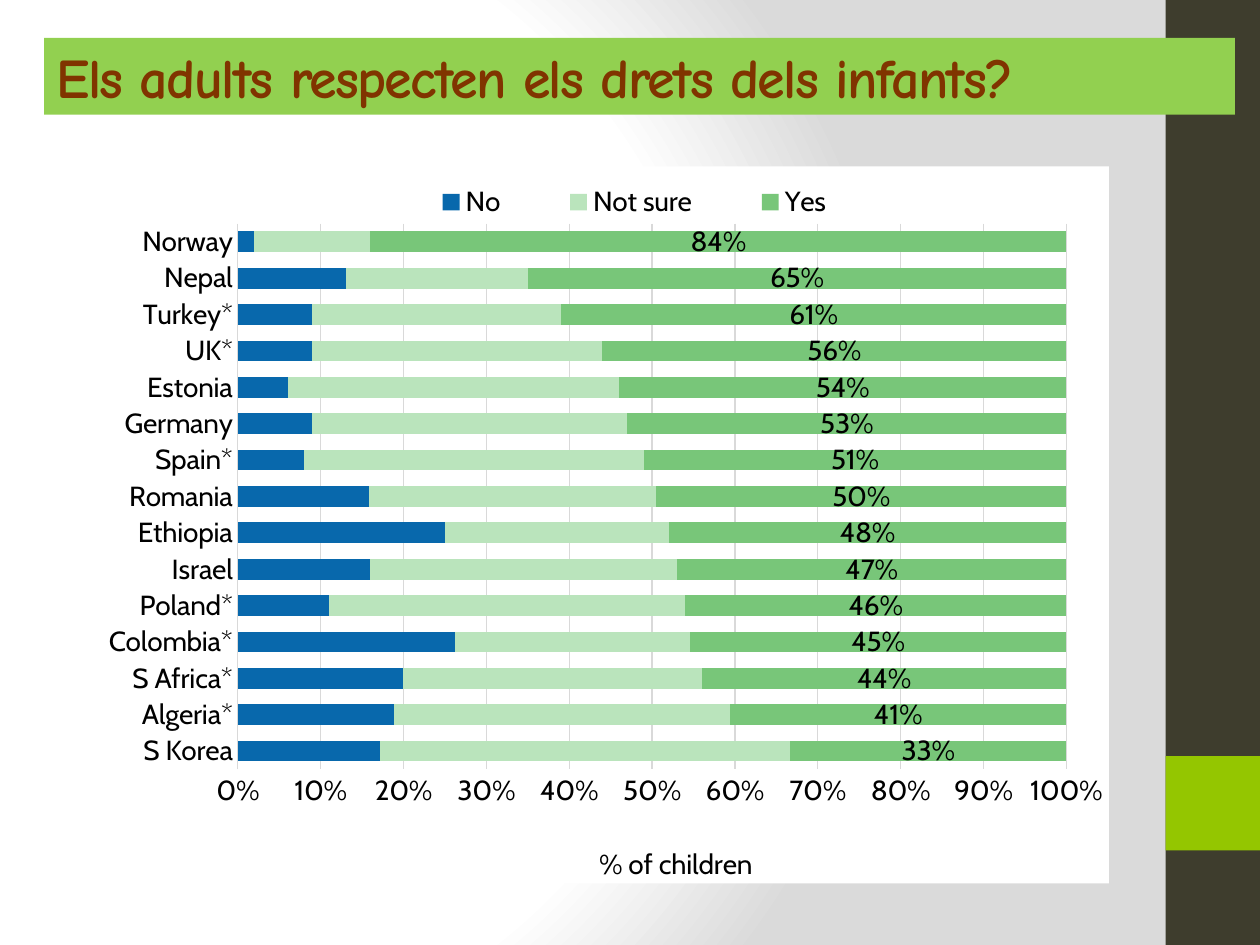
from pptx import Presentation
from pptx.chart.data import CategoryChartData
from pptx.dml.color import RGBColor
from pptx.enum.chart import (XL_CHART_TYPE, XL_LABEL_POSITION,
                             XL_LEGEND_POSITION, XL_TICK_MARK)
from pptx.enum.shapes import MSO_SHAPE
from pptx.enum.text import MSO_ANCHOR, MSO_AUTO_SIZE, PP_ALIGN
from pptx.oxml import parse_xml
from pptx.oxml.ns import nsdecls, qn
from pptx.util import Inches, Pt

TITLE = "Els adults respecten els drets dels infants?"
AXIS = "% of children"
ROWS = [  # country, no, not sure, yes
    ("S Korea", .17, .49, .33),
    ("Algeria*", .19, .41, .41),
    ("S Africa*", .20, .36, .44),
    ("Colombia*", .26, .28, .45),
    ("Poland*", .11, .43, .46),
    ("Israel", .16, .37, .47),
    ("Ethiopia", .25, .27, .48),
    ("Romania", .16, .35, .50),
    ("Spain*", .08, .41, .51),
    ("Germany", .09, .38, .53),
    ("Estonia", .06, .40, .54),
    ("UK*", .09, .35, .56),
    ("Turkey*", .09, .30, .61),
    ("Nepal", .13, .22, .65),
    ("Norway", .02, .14, .84),
]
SERIES = [("No", "0868AC"), ("Not sure", "BAE4BC"), ("Yes", "78C679")]
BARS = [((9.25, 0, .75, 7.5), "3E3D2D"), ((9.25, 6, .75, .75), "94C600")]
STOPS = [(0, "FFFFFF"), (75, "FFFFFF"), (100, "DADADA")]
THEME = {
    "band": "92D050", "head": "803400", "text": "000000",
    "grid": "D9D9D9", "paper": "FFFFFF",
    "head_font": "Comic Neue", "font": "Cabin",
    "head_size": 32, "size": 16,
}


def paint(fill, color):
    fill.solid()
    fill.fore_color.rgb = RGBColor.from_string(color)


def style(font, name="font", size="size", color="text", bold=False):
    font.name, font.size, font.bold = THEME[name], Pt(THEME[size]), bold
    font.color.rgb = RGBColor.from_string(THEME[color])


def rule(line):
    line.color.rgb = RGBColor.from_string(THEME["grid"])
    line.width = Pt(.75)


def place(node, after, x, y, w=None, h=None, inner=False):
    """Give a chart part a manual layout, as fractions of the chart."""
    for old in node.findall(qn("c:layout")):
        node.remove(old)
    parts = '<c:layoutTarget val="inner"/>' if inner else ""
    parts += '<c:xMode val="edge"/><c:yMode val="edge"/>'
    for key, val in zip("xywh", (x, y, w, h)):
        if val is not None:
            parts += f'<c:{key} val="{val}"/>'
    box = parse_xml(f'<c:layout {nsdecls("c")}><c:manualLayout>{parts}'
                    '</c:manualLayout></c:layout>')
    if after:
        node.find(qn(after)).addnext(box)
    else:
        node.insert(0, box)


def add_back(slide):
    stops = "".join(f'<a:gs pos="{pos * 1000}"><a:srgbClr val="{color}"/></a:gs>'
                    for pos, color in STOPS)
    slide.element.cSld.insert(0, parse_xml(
        f'<p:bg {nsdecls("p", "a")}><p:bgPr><a:gradFill rotWithShape="1">'
        f'<a:gsLst>{stops}</a:gsLst><a:path path="circle">'
        '<a:fillToRect l="20000" t="50000" r="100000" b="50000"/></a:path>'
        '</a:gradFill><a:effectLst/></p:bgPr></p:bg>'))
    for box, color in BARS:
        bar = slide.shapes.add_shape(MSO_SHAPE.RECTANGLE, *map(Inches, box))
        bar.shadow.inherit = False
        paint(bar.fill, color)
        bar.line.fill.background()


def add_title(slide):
    title = slide.shapes.title
    title.left, title.top, title.width, title.height = map(
        Inches, (.35, .3, 9.45, .61))
    paint(title.fill, THEME["band"])
    frame = title.text_frame
    frame.text = TITLE
    frame.auto_size = MSO_AUTO_SIZE.NONE
    frame.vertical_anchor = MSO_ANCHOR.MIDDLE
    para = frame.paragraphs[0]
    para.alignment = PP_ALIGN.LEFT
    style(para.font, "head_font", "head_size", "head", True)
    para.runs[0].font._element.set("spc", "-100")
    slide.shapes._spTree.append(title._element)  # in front of the side bars


def add_bars(slide):
    names, *cols = zip(*ROWS)
    data = CategoryChartData(number_format="0%")
    data.categories = names
    for (name, _), vals in zip(SERIES, cols):
        data.add_series(name, vals)
    chart = slide.shapes.add_chart(
        XL_CHART_TYPE.BAR_STACKED_100,
        *map(Inches, (.79, 1.32, 8.01, 5.74)), data).chart
    style(chart.font)
    chart.has_title = False
    space = chart._chartSpace
    space.chart.addnext(parse_xml(
        f'<c:spPr {nsdecls("c", "a")}><a:solidFill><a:srgbClr '
        f'val="{THEME["paper"]}"/></a:solidFill><a:ln><a:noFill/></a:ln></c:spPr>'))
    plot = chart.plots[0]
    plot.gap_width, plot.overlap = 75, 100
    plot.vary_by_categories = False
    for part, (_, color) in zip(plot.series, SERIES):
        paint(part.format.fill, color)
    labels = plot.series[-1].data_labels
    labels.show_value = True
    labels.number_format, labels.number_format_is_linked = "0%", False
    labels.position = XL_LABEL_POSITION.CENTER
    style(labels.font)

    cat, val = chart.category_axis, chart.value_axis
    for axis in (cat, val):
        axis.major_tick_mark = axis.minor_tick_mark = XL_TICK_MARK.NONE
        style(axis.tick_labels.font)
    cat.has_major_gridlines = False
    rule(cat.format.line)
    val.has_major_gridlines = True
    rule(val.major_gridlines.format.line)
    val.format.line.fill.background()
    val.minimum_scale, val.maximum_scale, val.major_unit = 0, 1, .1
    val.tick_labels.number_format = "0%"
    val.tick_labels.number_format_is_linked = False
    note = val.axis_title
    note.text_frame.text = AXIS
    style(note.text_frame.paragraphs[0].font)

    chart.has_legend = True
    legend = chart.legend
    legend.position = XL_LEGEND_POSITION.TOP
    legend.include_in_layout = False
    style(legend.font)
    place(space.chart.plotArea, None, .137, .08, .821, .761, True)
    place(legend._element, "c:legendPos", .28, .02, .5, .06)
    place(note._element, "c:tx", .49, .94)


def main():
    deck = Presentation()
    deck.slide_width, deck.slide_height = Inches(10), Inches(7.5)
    slide = deck.slides.add_slide(deck.slide_layouts[5])
    add_back(slide)
    add_title(slide)
    add_bars(slide)
    deck.save("out.pptx")


if __name__ == "__main__":
    main()
